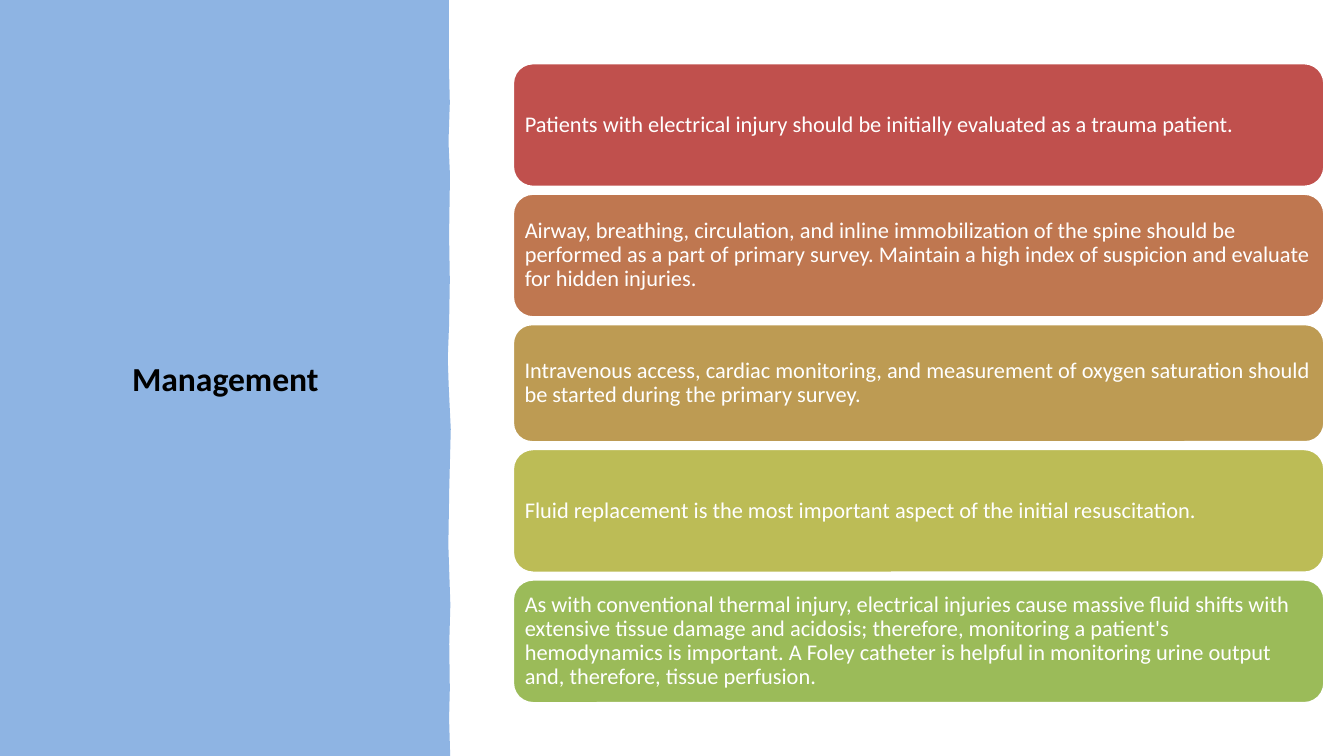
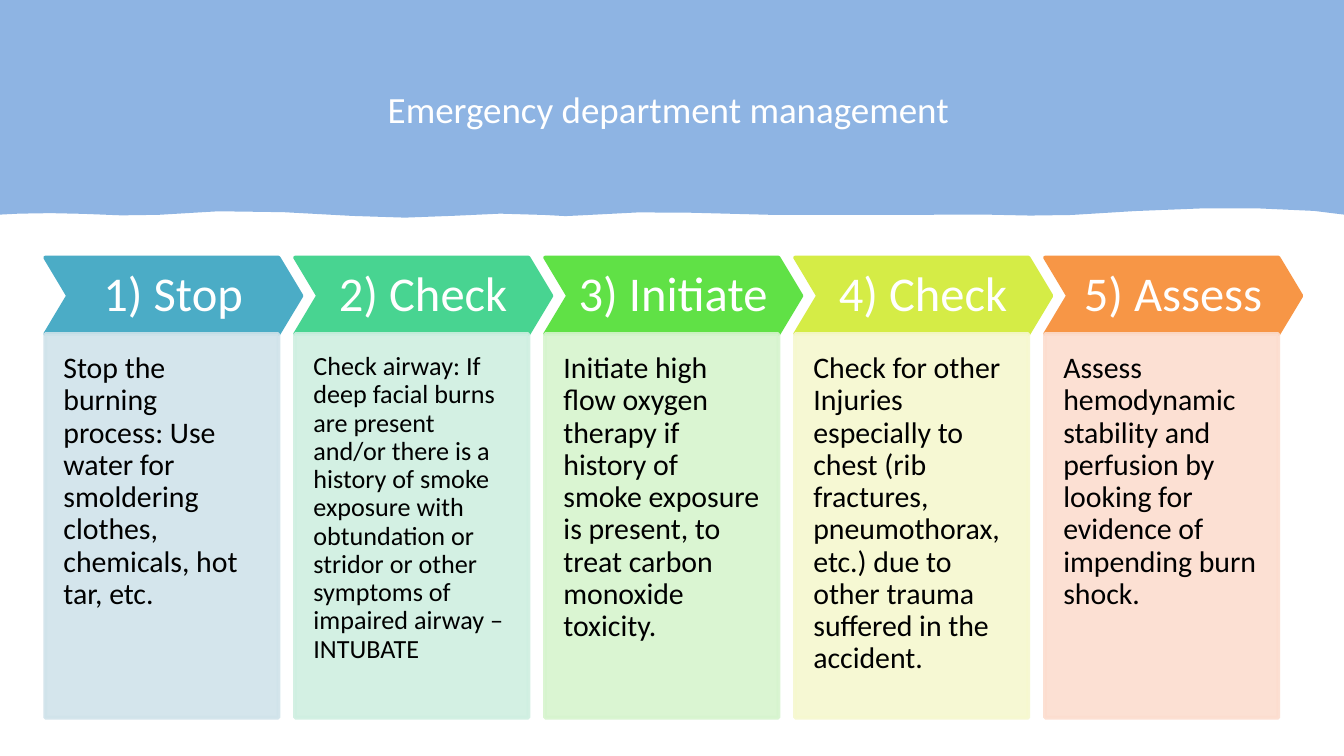
from lxml import etree
from pptx import Presentation
from pptx.dml.color import RGBColor
from pptx.enum.shapes import MSO_SHAPE
from pptx.enum.text import MSO_ANCHOR, PP_ALIGN
from pptx.oxml.ns import qn
from pptx.util import Pt

ROUND = MSO_SHAPE.ROUNDED_RECTANGLE
RECT = MSO_SHAPE.RECTANGLE
CHEVRON = MSO_SHAPE.CHEVRON
MIDDLE = MSO_ANCHOR.MIDDLE
TOP = MSO_ANCHOR.TOP
LEFT = PP_ALIGN.LEFT
CENTER = PP_ALIGN.CENTER

FONT = "Calibri"
WIDE, HIGH = 720, 405
WHITE = RGBColor(0xFF, 0xFF, 0xFF)
BLACK = RGBColor(0x00, 0x00, 0x00)
BAND = RGBColor(0x8E, 0xB4, 0xE3)

SIDE_EDGE = [
    (0, 240.5), (34, 240.5), (55, 241), (76, 240.3), (94, 241.1),
    (126, 240.6), (150, 241), (174, 240.6), (192, 239.9), (207, 240.4),
    (230, 241.5), (262, 240.7), (292, 240.2), (324, 241.3), (345, 240.7),
    (369, 241), (385, 240.6), (405, 241.2),
]
TOP_EDGE = [
    (0, 115), (10, 114.5), (27, 114.2), (45, 114.6), (65, 115.4),
    (85, 115.1), (117, 113.2), (152, 113.7), (189, 115.7), (217, 116.6),
    (244, 115.6), (268, 114.5), (292, 115.2), (303, 115.8), (313, 115.3),
    (342, 113.8), (371, 114), (413, 115.1), (455, 115.2), (528, 115),
    (552, 115.5), (574, 115.2), (608, 113.1), (643, 111.7),
    (675, 111.7), (704, 113), (720, 115),
]

BARS = [
    (RGBColor(0xC0, 0x50, 0x4D), 67,
     "Patients with electrical injury should be initially evaluated as a trauma patient."),
    (RGBColor(0xBF, 0x77, 0x50), 67,
     "Airway, breathing, circulation, and inline immobilization of the spine should be "
     "performed as a part of primary survey. Maintain a high index of suspicion and "
     "evaluate for hidden injuries."),
    (RGBColor(0xBD, 0x9B, 0x53), 64,
     "Intravenous access, cardiac monitoring, and measurement of oxygen saturation "
     "should be started during the primary survey."),
    (RGBColor(0xBC, 0xBC, 0x56), 67,
     "Fluid replacement is the most important aspect of the initial resuscitation."),
    (RGBColor(0x9B, 0xBB, 0x59), 67,
     "As with conventional thermal injury, electrical injuries cause massive fluid shifts "
     "with extensive tissue damage and acidosis; therefore, monitoring a patient's "
     "hemodynamics is important. A Foley catheter is helpful in monitoring urine output "
     "and, therefore, tissue perfusion."),
]

STEPS = [
    ("1) Stop", RGBColor(0x4B, 0xAC, 0xC6), RGBColor(0xD0, 0xE3, 0xEA), 16,
     "Stop the burning process: Use water for smoldering clothes, chemicals, hot tar, etc."),
    ("2) Check", RGBColor(0x48, 0xD4, 0x91), RGBColor(0xCF, 0xEF, 0xE1), 14,
     "Check airway: If deep facial burns are present and/or there is a history of smoke "
     "exposure with obtundation or stridor or other symptoms of impaired airway – INTUBATE"),
    ("3) Initiate", RGBColor(0x60, 0xE1, 0x46), RGBColor(0xD6, 0xF4, 0xCE), 16,
     "Initiate high flow oxygen therapy if history of smoke exposure is present, to treat "
     "carbon monoxide toxicity."),
    ("4) Check", RGBColor(0xD5, 0xEC, 0x46), RGBColor(0xF6, 0xF8, 0xCF), 16,
     "Check for other Injuries especially to chest (rib fractures, pneumothorax, etc.) due "
     "to other trauma suffered in the accident."),
    ("5) Assess", RGBColor(0xF7, 0x96, 0x46), RGBColor(0xFC, 0xDD, 0xCF), 16,
     "Assess hemodynamic stability and perfusion by looking for evidence of impending "
     "burn shock."),
]


def write(shape, text, size, color, align=LEFT, anchor=MIDDLE,
          pads=(7.2, 3.6, 7.2, 3.6), space=0.9, bold=False):
    frame = shape.text_frame
    frame.word_wrap = True
    frame.vertical_anchor = anchor
    (frame.margin_left, frame.margin_top,
     frame.margin_right, frame.margin_bottom) = map(Pt, pads)
    para = frame.paragraphs[0]
    para.alignment = align
    para.line_spacing = space
    run = para.add_run()
    run.text = text
    run.font.name = FONT
    run.font.size = Pt(size)
    run.font.bold = bold
    run.font.color.rgb = color


def paint(shape, fill, line=None):
    shape.shadow.inherit = False
    shape.fill.solid()
    shape.fill.fore_color.rgb = fill
    if line is None:
        shape.line.fill.background()
    else:
        shape.line.color.rgb = line
        shape.line.width = Pt(2)


def block(slide, kind, box, fill, line):
    shape = slide.shapes.add_shape(kind, *map(Pt, box))
    paint(shape, fill, line)
    return shape


def fade(shape, share):
    for color in shape._element.spPr.iter(qn("a:srgbClr")):
        etree.SubElement(color, qn("a:alpha")).set("val", str(share * 1000))


def wave(slide, edge, upright):
    outline = [(0, 0), *edge, (edge[-1][0], 0)]
    if upright:
        outline = [(x, y) for y, x in outline]
    spots = [(Pt(x), Pt(y)) for x, y in outline]
    pen = slide.shapes.build_freeform(*spots[0])
    pen.add_line_segments(spots[1:], close=True)
    shape = pen.convert_to_shape()
    paint(shape, BAND)
    return shape


def stack(slide, box, gap=2.9):
    left, top, width = box
    for fill, height, text in BARS:
        bar = block(slide, ROUND, (left, top, width, height), fill, WHITE)
        write(bar, text, 12, WHITE, pads=(3.5,) * 4)
        top += height + gap


def column(slide, box, step):
    left, top, width, height = box
    name, dark, pale, size, text = step
    head = 41
    arrow = block(slide, CHEVRON, (left, top, width, head), dark, dark)
    arrow.adjustments[0] = 0.3
    write(arrow, name, 26, WHITE, CENTER, pads=(5,) * 4)
    body = block(slide, RECT, (left, top + head, width - 12.3, height - head), pale, pale)
    fade(body, 90)
    write(body, text, size, BLACK, anchor=TOP, pads=(9.8, 10.1, 9.8, 19.4))


def survey(slide):
    side = wave(slide, SIDE_EDGE, True)
    write(side, "Management", 18, BLACK, CENTER, pads=(5, 2.9, 5, 2.9), space=1, bold=True)
    stack(slide, (274.4, 33.5, 435.5))


def care(slide):
    wave(slide, TOP_EDGE, False)
    title = slide.shapes.add_textbox(Pt(47.8), Pt(20.5), Pt(620.5), Pt(78.5))
    write(title, "Emergency department management", 19.8, WHITE, CENTER)
    for i, step in enumerate(STEPS):
        column(slide, (24.2 + i * 133.92, 138, 137.3, 246.5), step)


def main():
    deck = Presentation()
    deck.slide_width, deck.slide_height = Pt(WIDE), Pt(HIGH)
    for draw in (survey, care):
        draw(deck.slides.add_slide(deck.slide_layouts[6]))
    deck.save("out.pptx")


if __name__ == "__main__":
    main()
